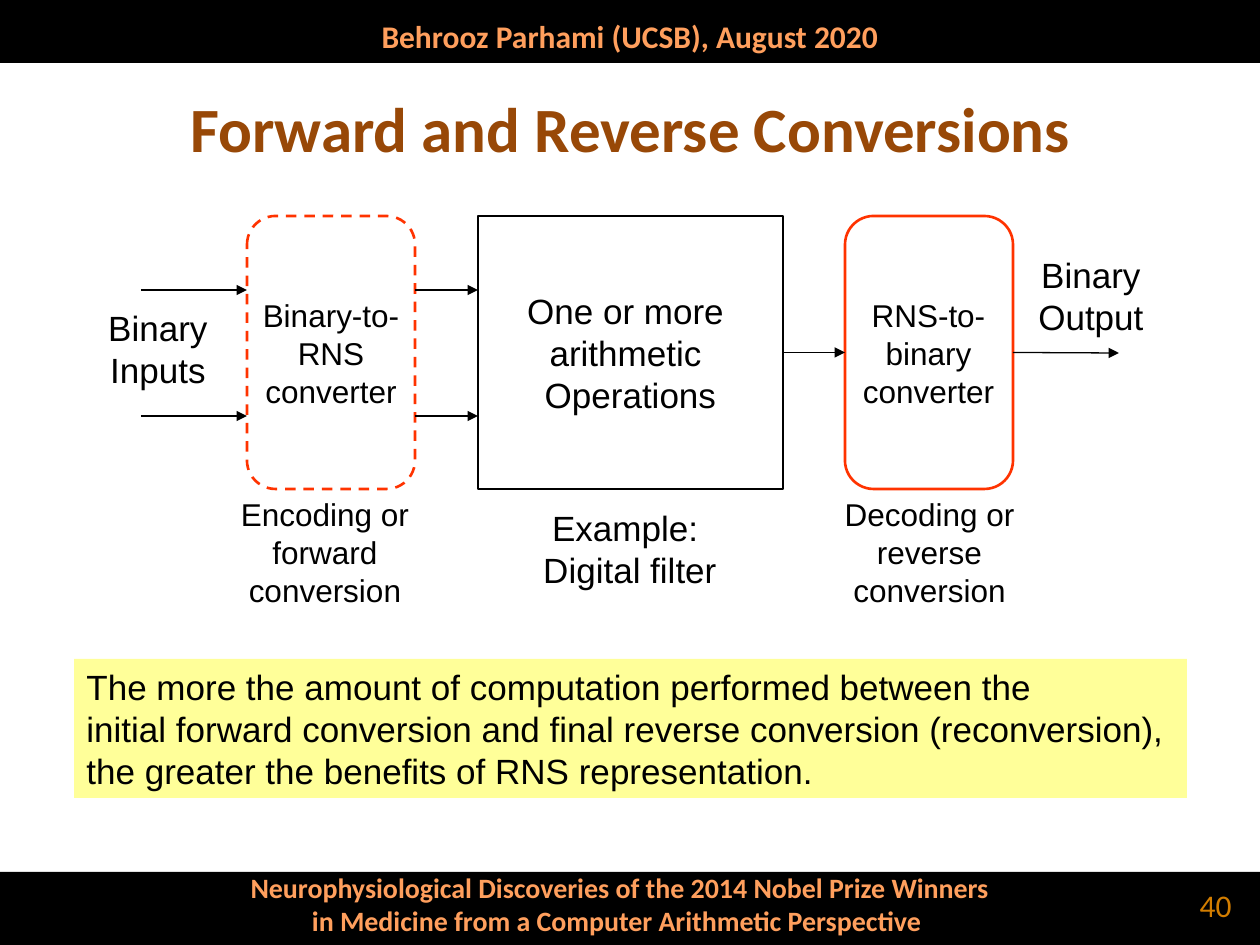
import collections
import pptx
import pptx.dml.color
import pptx.enum.dml
import pptx.enum.shapes
import pptx.enum.text
import pptx.oxml
import pptx.oxml.ns
import pptx.util

ALIGN = pptx.enum.text.PP_ALIGN
ANCHOR = pptx.enum.text.MSO_ANCHOR
SHAPE = pptx.enum.shapes.MSO_SHAPE
THEME = {
    "ink": "000000", "paper": "FFFFFF", "bar": "000000", "accent": "FF9F5D",
    "title": "984807", "converter": "FF3300", "note": "FFFF99", "number": "D27D00",
    "body_font": "Arial", "head_font": "Calibri",
    "title_size": 36, "label_size": 20, "small_size": 18, "footer_size": 16,
    "thin": 0.75, "thick": 1.5,
}
Box = collections.namedtuple("Box", "left top width height")


def px(length):
    """Turn whole pixels into EMU at 126 pixels to the inch."""
    return pptx.util.Emu(round(length * 914400 / 126))


def color(name):
    """Return a theme colour."""
    return pptx.dml.color.RGBColor.from_string(THEME[name])


def within(box, left, top, width, height):
    """Return a box placed relative to the corner of another box."""
    return Box(box.left + left, box.top + top, width, height)


def apply(target, values):
    """Set each attribute named in a dict of format values."""
    for name, value in values.items():
        setattr(target, name, value)


def write(shape, lines, size="label_size", ink="ink", font="body_font", bold=False,
          align=ALIGN.CENTER, anchor=ANCHOR.TOP, wrap=True):
    """Fill a shape with one formatted paragraph for each line."""
    frame = shape.text_frame
    apply(frame, {"word_wrap": wrap, "vertical_anchor": anchor})
    for index, line in enumerate(lines):
        para = frame.add_paragraph() if index else frame.paragraphs[0]
        para.alignment = align
        span = para.add_run()
        span.text = line
        apply(span.font, {"name": THEME[font], "size": pptx.util.Pt(THEME[size]), "bold": bold})
        span.font.color.rgb = color(ink)


def add_label(page, box, lines, **style):
    """Add a text box."""
    write(page.shapes.add_textbox(*map(px, box)), lines, **style)


def add_panel(page, box, fill=None, line=None, width="thin", kind=SHAPE.RECTANGLE):
    """Add a flat shape with an optional fill and outline."""
    panel = page.shapes.add_shape(kind, *map(px, box))
    panel.shadow.inherit = False
    if fill:
        panel.fill.solid()
        panel.fill.fore_color.rgb = color(fill)
    else:
        panel.fill.background()
    if line:
        panel.line.color.rgb = color(line)
        panel.line.width = pptx.util.Pt(THEME[width])
    else:
        panel.line.fill.background()
    return panel


def add_converter(page, box):
    """Add the rounded outline of a converter."""
    converter = add_panel(page, box, line="converter", width="thick", kind=SHAPE.ROUNDED_RECTANGLE)
    converter.adjustments[0] = 0.17
    return converter


def add_arrow(page, box, start, end, height, source=None, target=None):
    """Add a level arrow, joined to any source and target given."""
    level = px(box.top + height)
    arrow = page.shapes.add_connector(
        pptx.enum.shapes.MSO_CONNECTOR.STRAIGHT,
        px(box.left + start), level, px(box.left + end), level)
    if source:
        arrow.begin_connect(source, 3)
    if target:
        arrow.end_connect(target, 1)
    arrow.line.color.rgb = color("ink")
    arrow.line.width = pptx.util.Pt(THEME["thin"])
    head = pptx.oxml.parse_xml(f'<a:tailEnd {pptx.oxml.ns.nsdecls("a")} type="triangle"/>')
    arrow.line._get_or_add_ln().append(head)
    arrow._element.spPr.append(
        pptx.oxml.parse_xml(f'<a:effectLst {pptx.oxml.ns.nsdecls("a")}/>'))


def draw_header(page, box):
    """Draw the top bar with the author and date."""
    add_panel(page, box, fill="bar")
    add_label(page, within(box, 0, 4, box.width, box.height),
              ["Behrooz Parhami (UCSB), August 2020"], size="small_size",
              ink="accent", font="head_font", bold=True, anchor=ANCHOR.MIDDLE)


def draw_footer(page, box):
    """Draw the bottom bar with the talk title and page number."""
    add_panel(page, box, fill="bar")
    add_label(page, within(box, 116, -8, 1008, 81),
              ["Neurophysiological Discoveries of the 2014 Nobel Prize Winners",
               "in Medicine from a Computer Arithmetic Perspective "],
              size="footer_size", ink="accent", font="head_font", bold=True)
    add_label(page, within(box, 950, 8, 294, 50), ["40"], size="small_size",
              ink="number", font="head_font", align=ALIGN.RIGHT, anchor=ANCHOR.MIDDLE)


def draw_title(page, box):
    """Draw the slide title."""
    add_label(page, box, ["Forward and Reverse Conversions"], size="title_size",
              ink="title", font="head_font", bold=True, anchor=ANCHOR.MIDDLE)


def draw_diagram(page, box):
    """Draw the flow from binary inputs through RNS to binary output."""
    encoder = add_converter(page, within(box, 157, 0, 168, 273))
    encoder.line.dash_style = pptx.enum.dml.MSO_LINE.DASH
    operations = add_panel(page, within(box, 388, 0, 305, 273), fill="paper", line="ink")
    write(operations, ["One or more ", "arithmetic ", "Operations"],
          anchor=ANCHOR.MIDDLE, wrap=False)
    decoder = add_converter(page, within(box, 755, 0, 168, 273))

    for height in (74, 200):
        for start, end in ((51, 157), (325, 388)):
            add_arrow(page, box, start, end, height)
    add_arrow(page, box, 693, 755, 137, source=operations, target=decoder)
    add_arrow(page, box, 923, 1029, 137, source=decoder)

    labels = (
        ((0, 84, 136, 97), ["Binary", "Inputs"], "label_size"),
        ((933, 31, 136, 97), ["Binary", "Output"], "label_size"),
        ((419, 284, 242, 97), ["Example: ", "Digital filter"], "label_size"),
        ((157, 74, 168, 126), ["Binary-to-RNS converter"], "small_size"),
        ((744, 74, 189, 126), ["RNS-to-binary converter"], "small_size"),
        ((114, 273, 242, 126), ["Encoding or forward conversion"], "small_size"),
        ((703, 273, 273, 126), ["Decoding or reverse conversion"], "small_size"),
    )
    for place, lines, size in labels:
        add_label(page, within(box, *place), lines, size=size)


def draw_note(page, box):
    """Draw the highlighted conclusion."""
    write(add_panel(page, box, fill="note"),
          ["The more the amount of computation performed between the",
           "initial forward conversion and final reverse conversion (reconversion), "
           "the greater the benefits of RNS representation."],
          align=ALIGN.LEFT)


def main():
    """Build the slide and save it."""
    deck = pptx.Presentation()
    apply(deck, {"slide_width": px(1260), "slide_height": px(945)})
    page = deck.slides.add_slide(deck.slide_layouts[6])
    draw_footer(page, Box(0, 872, 1260, 73))
    draw_header(page, Box(0, 0, 1260, 63))
    draw_title(page, Box(32, 58, 1197, 139))
    draw_diagram(page, Box(90, 216, 1070, 399))
    draw_note(page, Box(74, 659, 1113, 139))
    deck.save("out.pptx")


if __name__ == "__main__":
    main()
